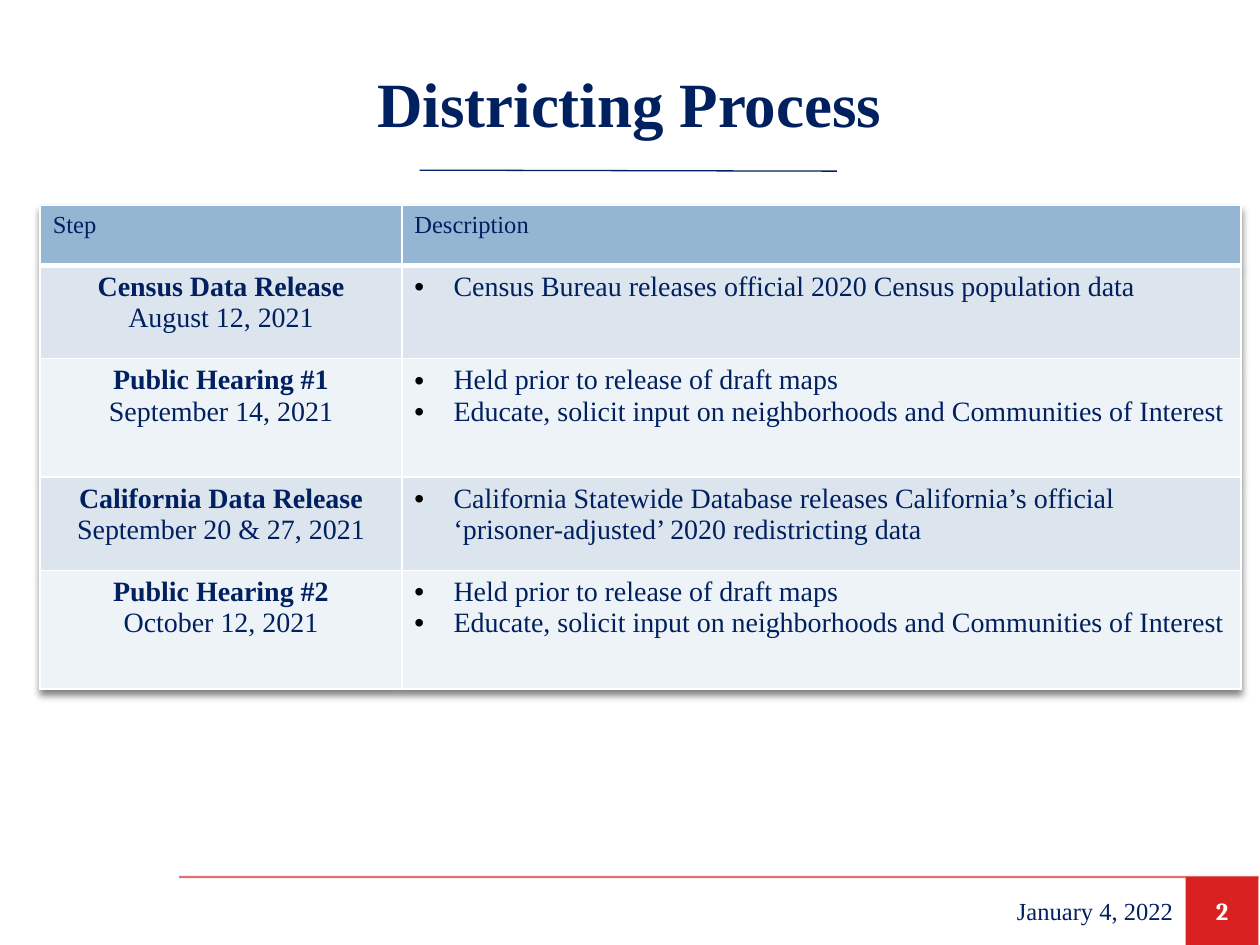
"""Build the Districting Process slide with its table of steps."""
from lxml.etree import SubElement
from pptx import Presentation
from pptx.dml.color import RGBColor
from pptx.enum.shapes import MSO_CONNECTOR as Connector, MSO_SHAPE as Shape
from pptx.enum.text import MSO_ANCHOR as Anchor, PP_ALIGN as Align
from pptx.oxml import parse_xml
from pptx.oxml.ns import nsdecls, qn
from pptx.util import Cm, Pt

NAVY, WHITE, RED = "002060", "FFFFFF", "D92121"
SERIF = "Times New Roman"


def color(value):
    return RGBColor.from_string(value)


def style(paragraph, text, size, align=Align.LEFT, bold=False, ink=NAVY, face=SERIF):
    paragraph.text = text
    paragraph.alignment = align
    font = paragraph.font
    font.name, font.size, font.bold = face, Pt(size), bold
    font.color.rgb = color(ink)


deck = Presentation()
deck.slide_width, deck.slide_height = Cm(25.4), Cm(19.05)
slide = deck.slides.add_slide(deck.slide_layouts[6])
shapes = slide.shapes

for x1, y1, x2, y2, ink, width, alpha in [
    (3.61, 17.68, 25.37, 17.68, "C80000", 1.25, 55),
    (8.46, 3.43, 16.87, 3.45, NAVY, 0.75, 100),
]:
    rule = shapes.add_connector(Connector.STRAIGHT, Cm(x1), Cm(y1), Cm(x2), Cm(y2))
    rule.line.color.rgb = color(ink)
    rule.line.width = Pt(width)
    SubElement(rule.line._ln.find(".//" + qn("a:srgbClr")), qn("a:alpha"), val=str(alpha * 1000))
    SubElement(rule._element.spPr, qn("a:effectLst"))

title = shapes.add_textbox(Cm(0.94), Cm(0.69), Cm(23.5), Cm(2.74))
date = shapes.add_textbox(Cm(19.48), Cm(17.68), Cm(4.42), Cm(1.37))
page = shapes.add_shape(Shape.RECTANGLE, Cm(23.9), Cm(17.68), Cm(1.47), Cm(1.37))
page.shadow.inherit = False
page.fill.solid()
page.fill.fore_color.rgb = color(RED)
page.line.fill.background()

for box, text, size, align, bold, ink, face in [
    (title, "Districting Process", 36, Align.CENTER, True, NAVY, SERIF),
    (date, "January 4, 2022", 14, Align.RIGHT, False, NAVY, SERIF),
    (page, "2", 14, Align.CENTER, True, WHITE, "Cambria"),
]:
    frame = box.text_frame
    frame.word_wrap = True
    frame.vertical_anchor = Anchor.MIDDLE
    style(frame.paragraphs[0], text, size, align, bold, ink, face)

hearing_points = [
    "Held prior to release of draft maps",
    "Educate, solicit input on neighborhoods and Communities of Interest",
]
steps = [
    ("Census Data Release", "August 12, 2021",
     ["Census Bureau releases official 2020 Census population data"]),
    ("Public Hearing #1", "September 14, 2021", hearing_points),
    ("California Data Release", "September 20 & 27, 2021",
     ["California Statewide Database releases California’s official "
      "‘prisoner-adjusted’ 2020 redistricting data"]),
    ("Public Hearing #2", "October 12, 2021", hearing_points),
]

schedule = shapes.add_table(
    len(steps) + 1, 2, Cm(0.81), Cm(4.14), Cm(24.21), Cm(9.75)).table
for column, width in zip(schedule.columns, [7.29, 16.92]):
    column.width = Cm(width)
for row, height in zip(schedule.rows, [1.21, 1.88, 2.39, 1.88, 2.39]):
    row.height = Cm(height)
schedule._tbl.tblPr.insert(0, parse_xml(
    f'<a:effectLst {nsdecls("a")}><a:outerShdw blurRad="50800" dist="38100" dir="5400000">'
    '<a:srgbClr val="000000"><a:alpha val="50000"/></a:srgbClr></a:outerShdw></a:effectLst>'))

for row_number, row in enumerate(schedule.rows):
    band = "94B6D2" if row_number == 0 else ("EEF3F7", "DCE5EE")[row_number % 2]
    for cell in row.cells:
        borders = cell._tc.get_or_add_tcPr()
        for side in "LRTB":
            width = 3 if row_number == 0 and side == "B" else 1
            borders.append(parse_xml(
                f'<a:ln{side} {nsdecls("a")} w="{Pt(width)}"><a:solidFill>'
                f'<a:srgbClr val="{WHITE}"/></a:solidFill></a:ln{side}>'))
        cell.fill.solid()
        cell.fill.fore_color.rgb = color(band)

for cell, heading in zip(schedule.rows[0].cells, ["Step", "Description"]):
    style(cell.text_frame.paragraphs[0], heading, 14)

for row_number, (step, day, points) in enumerate(steps, 1):
    name_frame = schedule.cell(row_number, 0).text_frame
    style(name_frame.paragraphs[0], step, 16, Align.CENTER, True)
    style(name_frame.add_paragraph(), day, 16, Align.CENTER)
    point_frame = schedule.cell(row_number, 1).text_frame
    for index, point in enumerate(points):
        paragraph = point_frame.add_paragraph() if index else point_frame.paragraphs[0]
        properties = paragraph._p.get_or_add_pPr()
        properties.set("marL", str(Cm(0.79)))
        properties.set("indent", str(Cm(-0.79)))
        bullet_color = SubElement(properties, qn("a:buClr"))
        SubElement(bullet_color, qn("a:srgbClr"), val="000000")
        SubElement(properties, qn("a:buFont"), typeface="Arial")
        SubElement(properties, qn("a:buChar"), char="•")
        style(paragraph, point, 16)

deck.save("out.pptx")
